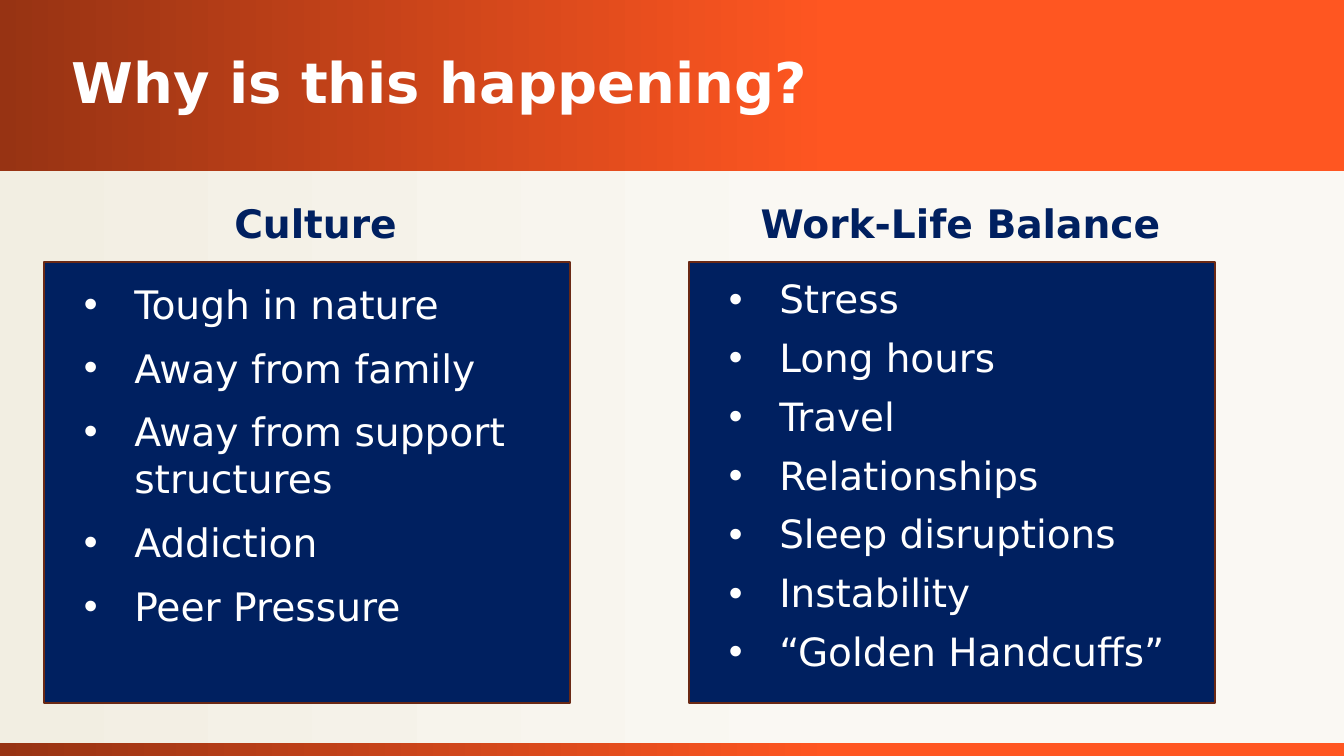
import pptx
import pptx.dml.color
import pptx.enum.shapes
import pptx.enum.text
import pptx.util
from lxml import etree

RGBColor = pptx.dml.color.RGBColor
PP_ALIGN = pptx.enum.text.PP_ALIGN
MSO_ANCHOR = pptx.enum.text.MSO_ANCHOR

WHITE = RGBColor(0xFF, 0xFF, 0xFF)
NAVY = RGBColor(0x00, 0x20, 0x60)
BROWN = RGBColor(0x6A, 0x29, 0x15)
RUST = RGBColor(0x97, 0x33, 0x13)
ORANGE = RGBColor(0xFF, 0x56, 0x21)
CREAM = RGBColor(0xF2, 0xEE, 0xE2)
IVORY = RGBColor(0xFA, 0xF8, 0xF3)

EMU_PER_PX = 914400 / 100.8
FONT_NAME = "DejaVu Sans"

presentation = pptx.Presentation()
presentation.slide_width = round(1344 * EMU_PER_PX)
presentation.slide_height = round(756 * EMU_PER_PX)
slide = presentation.slides.add_slide(presentation.slide_layouts[6])


def add_rectangle(*box):
    shape = slide.shapes.add_shape(
        pptx.enum.shapes.MSO_SHAPE.RECTANGLE,
        *[round(length * EMU_PER_PX) for length in box],
    )
    shape.shadow.inherit = False
    return shape


def add_text(box, lines, size, color, bold=False, bullet=False,
             anchor=MSO_ANCHOR.TOP, **paragraph_format):
    text_box = slide.shapes.add_textbox(*[round(length * EMU_PER_PX) for length in box])
    frame = text_box.text_frame
    frame.word_wrap = True
    frame.vertical_anchor = anchor
    font_format = {"name": FONT_NAME, "size": pptx.util.Pt(size), "bold": bold}
    for index, line in enumerate(lines):
        paragraph = frame.paragraphs[0] if index == 0 else frame.add_paragraph()
        paragraph.text = line
        for name, value in paragraph_format.items():
            setattr(paragraph, name, value)
        paragraph.space_before = pptx.util.Pt(12 if index else 0)
        if bullet:
            properties = paragraph._p.get_or_add_pPr()
            properties.set("marL", "457200")
            properties.set("indent", "-457200")
            for tag, name, value in (("buFont", "typeface", "Arial"), ("buChar", "char", "•")):
                element = etree.SubElement(properties, pptx.oxml.ns.qn(f"a:{tag}"))
                element.set(name, value)
        font = paragraph.runs[0].font
        for name, value in font_format.items():
            setattr(font, name, value)
        font.color.rgb = color


bands = [
    ((0, 0, 1344, 756), CREAM, IVORY),
    ((0, 0, 1344, 171), RUST, ORANGE),
    ((0, 743, 1344, 13), RUST, ORANGE),
]
for box, start_color, end_color in bands:
    band = add_rectangle(*box)
    band.line.fill.background()
    band.fill.gradient()
    band.fill.gradient_angle = 0
    for stop, color, position in zip(
        band.fill.gradient_stops, (start_color, end_color), (0, 0.62)
    ):
        stop.color.rgb = color
        stop.position = position

add_text((62, 0, 1188, 171), ["Why is this happening?"], 40, WHITE, bold=True,
         anchor=MSO_ANCHOR.MIDDLE, line_spacing=0.9)

columns = [
    (44, "Culture", 28, 1.0, [
        "Tough in nature",
        "Away from family",
        "Away from support structures",
        "Addiction",
        "Peer Pressure",
    ]),
    (689, "Work-Life Balance", 27.8, 0.9, [
        "Stress",
        "Long hours",
        "Travel",
        "Relationships",
        "Sleep disruptions",
        "Instability",
        "“Golden Handcuffs”",
    ]),
]
for left, heading, size, line_spacing, items in columns:
    panel = add_rectangle(left, 262, 526, 441)
    panel.fill.solid()
    panel.fill.fore_color.rgb = NAVY
    panel.line.color.rgb = BROWN
    panel.line.width = pptx.util.Pt(1)
    add_text((left + 18, 194, 507, 58), [heading], 28, NAVY, bold=True,
             alignment=PP_ALIGN.CENTER)
    add_text((left + 30, 275, 464, 428), items, size, WHITE, bullet=True,
             line_spacing=line_spacing)

presentation.save("out.pptx")
